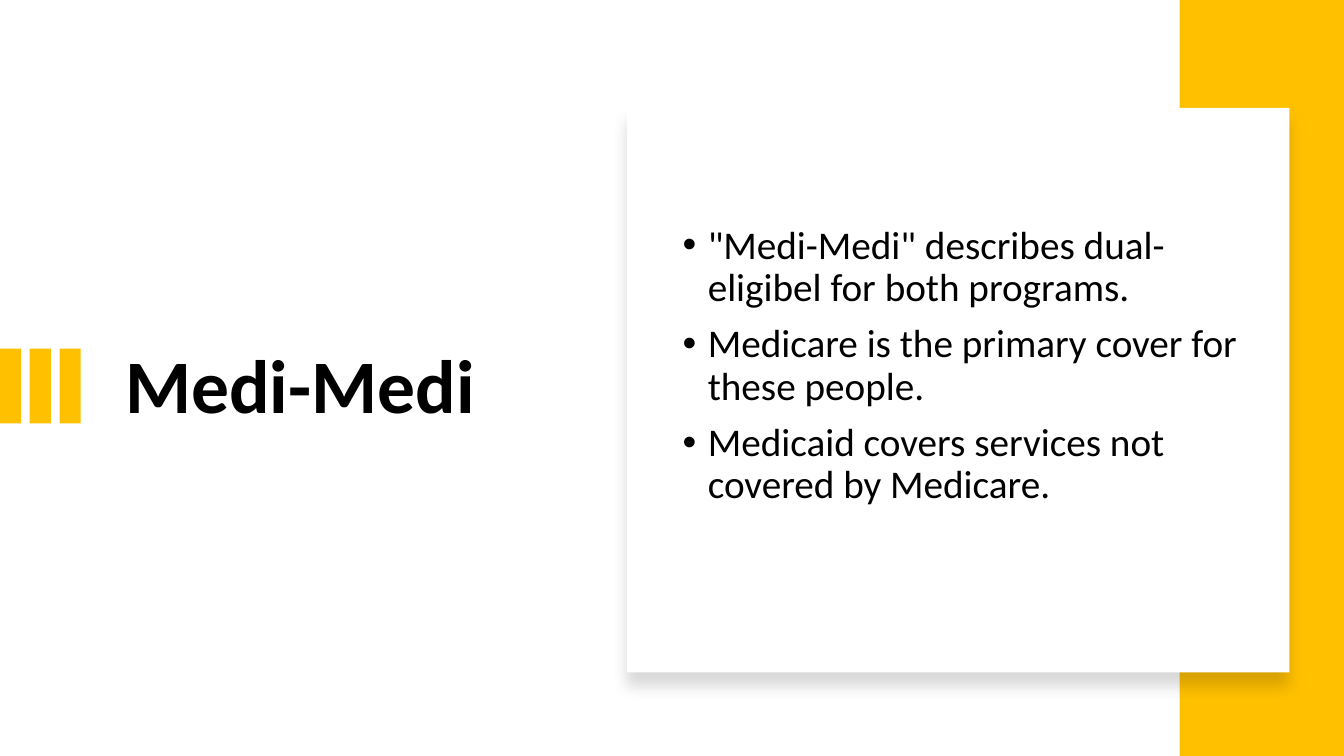
import pptx
import pptx.util
import pptx.oxml
import pptx.dml.color
import pptx.enum.shapes
import pptx.enum.text
from pptx.util import Inches

GOLD = pptx.dml.color.RGBColor(0xFF, 0xC0, 0x00)
WHITE = pptx.dml.color.RGBColor(0xFF, 0xFF, 0xFF)
BLACK = pptx.dml.color.RGBColor(0x00, 0x00, 0x00)
SPACE = 'xmlns:a="http://schemas.openxmlformats.org/drawingml/2006/main"'

deck = pptx.Presentation()
deck.slide_width = Inches(13.33)
deck.slide_height = Inches(7.5)
slide = deck.slides.add_slide(deck.slide_layouts[1])
title, body = slide.placeholders


def add_block(left, top, width, height, color):
    block = slide.shapes.add_shape(
        pptx.enum.shapes.MSO_SHAPE.RECTANGLE,
        Inches(left), Inches(top), Inches(width), Inches(height))
    block.fill.solid()
    block.fill.fore_color.rgb = color
    block.line.fill.background()
    block.shadow.inherit = False
    return block


def set_text(holder, left, width, lines, size, bold):
    holder.left, holder.top = Inches(left), Inches(1.46)
    holder.width, holder.height = Inches(width), Inches(4.79)
    frame = holder.text_frame
    frame.text = "\n".join(lines)
    frame.word_wrap = True
    frame.auto_size = pptx.enum.text.MSO_AUTO_SIZE.NONE
    frame.vertical_anchor = pptx.enum.text.MSO_ANCHOR.MIDDLE
    for para in frame.paragraphs:
        para.alignment = pptx.enum.text.PP_ALIGN.LEFT
        para.line_spacing = 0.9
        for run in para.runs:
            run.font.name = "Calibri"
            run.font.size = pptx.util.Pt(size)
            run.font.bold = bold
            run.font.color.rgb = BLACK


# Title
set_text(title, 1.14, 4.26, ["Medi-Medi"], 54, True)

# Three bars at the left edge
for step in range(3):
    add_block(step * 0.295, 3.46, 0.21, 0.74, GOLD)

# Gold band and white card with a soft shadow
add_block(11.7, 0, 1.63, 7.5, GOLD)
card = add_block(6.22, 1.07, 6.57, 5.6, WHITE)
effect = card.element.spPr.find(pptx.oxml.ns.qn("a:effectLst"))
effect.append(pptx.oxml.parse_xml(
    f'<a:outerShdw {SPACE} blurRad="139700" dist="127000" dir="5400000" '
    'algn="t" rotWithShape="0"><a:srgbClr val="000000">'
    '<a:alpha val="15000"/></a:srgbClr></a:outerShdw>'))

# Bullet list, raised slightly and placed above the card
set_text(body, 6.67, 5.75, [
    '"Medi-Medi" describes dual-eligibel for both programs.',
    "Medicare is the primary cover for these people.",
    "Medicaid covers services not covered by Medicare.",
], 28, False)
body.text_frame.margin_bottom = Inches(0.49)
for para in body.text_frame.paragraphs:
    para.space_before = pptx.util.Pt(10)
    props = para._p.get_or_add_pPr()
    props.set("marL", str(Inches(0.25)))
    props.set("indent", str(Inches(-0.25)))
    props.append(pptx.oxml.parse_xml(f'<a:buFont {SPACE} typeface="Arial"/>'))
    props.append(pptx.oxml.parse_xml(f'<a:buChar {SPACE} char="•"/>'))
slide.shapes.element.append(body.element)

deck.save("out.pptx")
